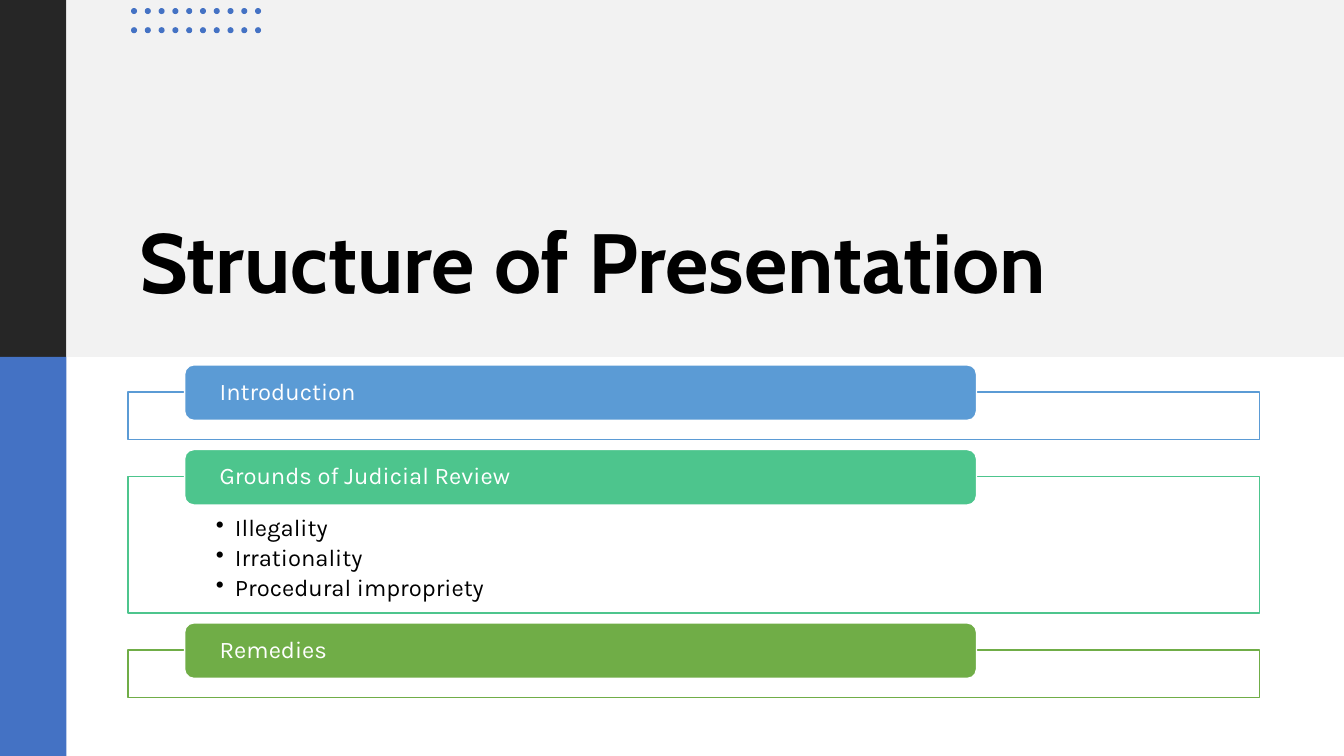
import lxml.etree
import pptx
import pptx.dml.color
import pptx.enum.shapes
import pptx.enum.text
import pptx.oxml.ns
import pptx.util

Inches, Pt = pptx.util.Inches, pptx.util.Pt
SHAPES = pptx.enum.shapes.MSO_SHAPE
ANCHORS = pptx.enum.text.MSO_ANCHOR
LEFT = pptx.enum.text.PP_ALIGN.LEFT

WIDTH, HEIGHT = 13.33, 7.5
SIDE, HEADER = 0.66, 3.54  # side strip width, header height
COLOURS = {"dark": "262626", "pale": "F2F2F2", "accent": "4472C4",
           "white": "FFFFFF", "black": "000000",
           "blue": "5B9BD5", "mint": "4DC58D", "green": "70AD47"}
SECTIONS = [
    ("Introduction", "blue", 0.47, []),
    ("Grounds of Judicial Review", "mint", 1.35,
     ["Illegality", "Irrationality", "Procedural impropriety"]),
    ("Remedies", "green", 0.47, []),
]


def colour(name):
    return pptx.dml.color.RGBColor.from_string(COLOURS[name])


def add_block(shapes, kind, box, fill, line=None):
    block = shapes.add_shape(kind, *[Inches(length) for length in box])
    block.shadow.inherit = False
    block.fill.solid()
    block.fill.fore_color.rgb = colour(fill)
    if line:
        block.line.color.rgb = colour(line)
        block.line.width = Pt(1)
    else:
        block.line.fill.background()
    return block


def set_frame(frame, anchor, margins):
    frame.word_wrap = True
    frame.auto_size = pptx.enum.text.MSO_AUTO_SIZE.NONE
    frame.vertical_anchor = anchor
    (frame.margin_left, frame.margin_top,
     frame.margin_right, frame.margin_bottom) = [Inches(m) for m in margins]


def format_text(frame, font, size, ink, bold=False, after=0):
    for para in frame.paragraphs:
        para.alignment = LEFT
        para.line_spacing = 0.9
        para.space_before = Pt(0)
        para.space_after = Pt(after)
        for span in para.runs:
            span.font.name = font
            span.font.size = Pt(size)
            span.font.bold = bold
            span.font.color.rgb = colour(ink)


def add_bullet(para):
    props = para._p.get_or_add_pPr()
    props.set("marL", str(Inches(0.19)))
    props.set("indent", str(-Inches(0.19)))
    bullet = lxml.etree.SubElement(props, pptx.oxml.ns.qn("a:buChar"))
    bullet.set("char", "•")


def set_opacity(block, percent):
    fill = block.element.spPr.find(".//" + pptx.oxml.ns.qn("a:srgbClr"))
    alpha = lxml.etree.SubElement(fill, pptx.oxml.ns.qn("a:alpha"))
    alpha.set("val", str(percent * 1000))


def add_backdrop(page):
    for box, fill in [
        ((0, 0, SIDE, HEADER), "dark"),
        ((SIDE, 0, WIDTH - SIDE, HEADER), "pale"),
        ((0, HEADER, SIDE, HEIGHT - HEADER), "accent"),
    ]:
        add_block(page.shapes, SHAPES.RECTANGLE, box, fill)


def add_title(page, box, text):
    title = page.shapes.title
    title.left, title.top, title.width, title.height = map(Inches, box)
    title.text_frame.text = text
    set_frame(title.text_frame, ANCHORS.BOTTOM, (0.1, 0.05, 0.1, 0.05))
    format_text(title.text_frame, "Cabin", 60, "black", bold=True)
    page.shapes.element.append(title.element)  # bring in front of the header


def add_dots(page, left, top, columns=10, rows=2):
    dots = page.shapes.add_group_shape()
    for index in range(columns * rows):
        row, column = divmod(index, columns)
        box = (left + column * 1.23 / (columns - 1), top + row * 0.19, 0.06, 0.06)
        add_block(dots.shapes, SHAPES.OVAL, box, "accent")


def add_section(shapes, left, top, width, section):
    """Draw a tab over its outlined panel; return the panel's bottom."""
    heading, tint, height, points = section
    panel_top = top + 0.27

    # Outlined panel with its points
    panel = add_block(shapes, SHAPES.RECTANGLE,
                      (left, panel_top, width, height), "white", tint)
    set_opacity(panel, 90)
    if points:
        panel.text_frame.text = "\n".join(points)
        set_frame(panel.text_frame, ANCHORS.TOP, (0.87, 0.39, 0.87, 0.13))
        format_text(panel.text_frame, "Karla", 17, "black", after=3)
        for para in panel.text_frame.paragraphs:
            add_bullet(para)

    # Heading tab
    tab = add_block(shapes, SHAPES.ROUNDED_RECTANGLE,
                    (left + 0.05 * width, top, 0.7 * width, 0.55), tint, "white")
    tab.text_frame.text = heading
    set_frame(tab.text_frame, ANCHORS.MIDDLE, (0.32, 0, 0.32, 0))
    format_text(tab.text_frame, "Karla", 17, "white")
    return panel_top + height


def add_outline(page, left, top, width, gap=0.1):
    outline = page.shapes.add_group_shape()
    for section in SECTIONS:
        top = add_section(outline.shapes, left, top, width, section) + gap


def main():
    deck = pptx.Presentation()
    deck.slide_width, deck.slide_height = Inches(WIDTH), Inches(HEIGHT)
    page = deck.slides.add_slide(deck.slide_layouts[5])
    add_backdrop(page)
    add_title(page, (1.28, 0.79, 11.22, 2.35), "Structure of Presentation")
    add_dots(page, 1.3, 0.08)
    add_outline(page, 1.27, 3.62, 11.22)
    deck.save("out.pptx")


if __name__ == "__main__":
    main()
